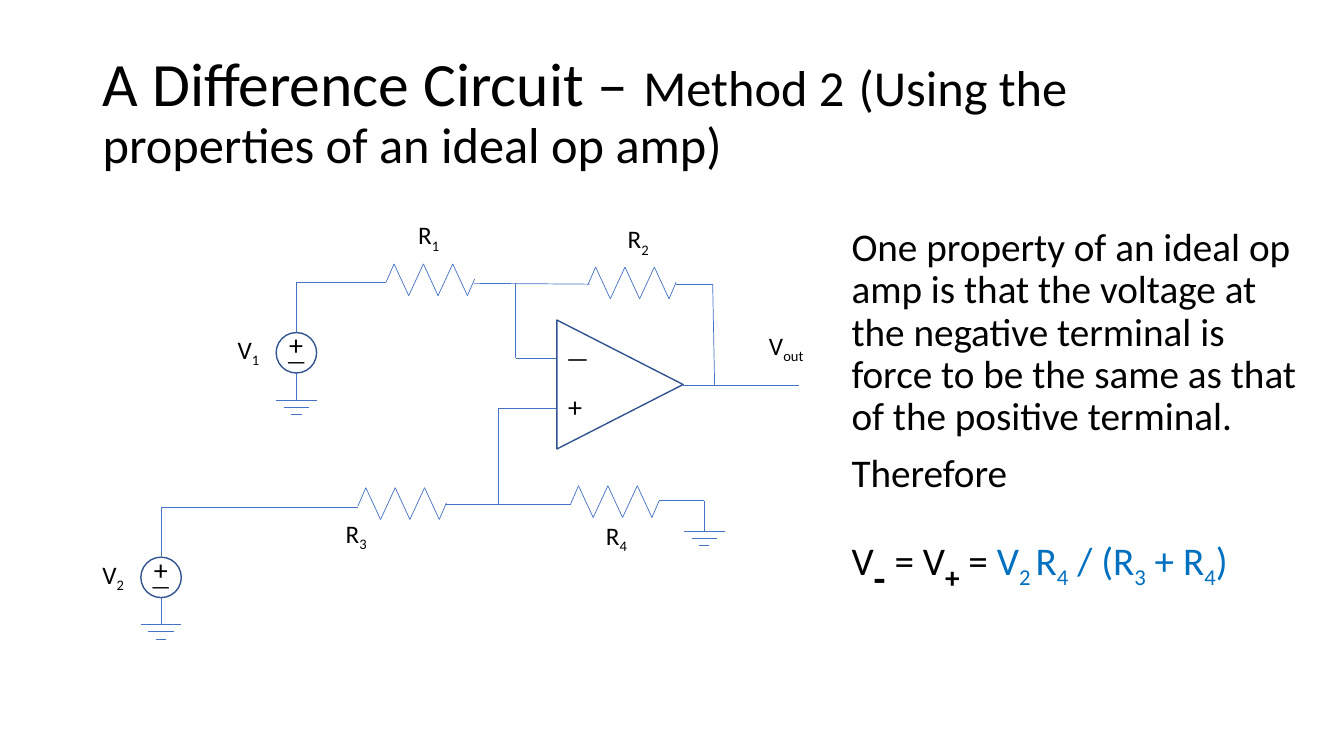
from dataclasses import dataclass
from itertools import pairwise

from lxml import etree
from pptx import Presentation
from pptx import util as u
from pptx.dml.color import RGBColor
from pptx.enum import shapes, text
from pptx.oxml import ns


@dataclass(frozen=True)
class Theme:
    font: str = "Calibri"
    ink: str = "000000"
    wire: str = "4472C4"
    outline: str = "325491"
    accent: str = "0070C0"
    title: int = 44
    subtitle: int = 36
    body: int = 28
    minus_sub: int = 48
    plus_sub: int = 36
    label: int = 18
    plus: int = 20
    small_minus: int = 16
    wire_width: float = 0.5
    outline_width: float = 1


T = Theme()
BLUE = {"color": T.accent}
BLUE_SUB = {"color": T.accent, "sub": True}


def style(font, size, color=T.ink):
    font.name, font.size = T.font, u.Pt(size)
    font.color.rgb = RGBColor.from_string(color)


def add_run(p, content, size=None, color=None, bold=None, sub=False):
    r = p.add_run()
    r.text = content
    if size:
        r.font.size = u.Pt(size)
    if color:
        r.font.color.rgb = RGBColor.from_string(color)
    r.font.bold = bold
    if sub:
        r._r.get_or_add_rPr().set("baseline", "-25000")


def add_box(parent, x, y, w, h, anchor=text.MSO_ANCHOR.TOP):
    sp = parent.add_textbox(u.Cm(x), u.Cm(y), u.Cm(w), u.Cm(h))
    tf = sp.text_frame
    tf.word_wrap, tf.vertical_anchor = True, anchor
    return tf


def title(s, x, y, w, h):
    p = add_box(s.shapes, x, y, w, h, text.MSO_ANCHOR.MIDDLE).paragraphs[0]
    style(p.font, T.title)
    p.line_spacing = 0.9
    add_run(p, "A Difference Circuit – ", T.title)
    add_run(p, "Method 2", T.subtitle)
    add_run(p, " ", T.title)
    add_run(p, "(Using the properties of an ideal op amp)", T.subtitle)


def explanation(s, x, y, w, h):
    tf = add_box(s.shapes, x, y, w, h)
    paragraphs = [
        [("One property of an ideal op amp is that the voltage at the negative "
          "terminal is force to be the same as that of the positive terminal.", {})],
        [("Therefore", {})],
        [("V", {}), ("-", {"size": T.minus_sub, "bold": True, "sub": True}),
         (" = V", {}), ("+", {"size": T.plus_sub, "bold": True, "sub": True}),
         (" = ", {}), ("V", BLUE), ("2 ", BLUE_SUB), ("R", BLUE), ("4", BLUE_SUB),
         (" / (R", BLUE), ("3", BLUE_SUB), (" + R", BLUE), ("4", BLUE_SUB), (")", BLUE)],
    ]
    for i, runs in enumerate(paragraphs):
        p = tf.add_paragraph() if i else tf.paragraphs[0]
        style(p.font, T.body)
        p.line_spacing, p.space_before = 0.9, u.Pt(10)
        for content, look in runs:
            add_run(p, content, **look)


class Circuit:
    """Draws circuit symbols in one group, in centimetres from its corner."""

    def __init__(self, s, x, y):
        self.group = s.shapes.add_group_shape()
        self.x, self.y = x, y

    def wire(self, *points):
        for (x1, y1), (x2, y2) in pairwise(points):
            ends = (self.x + x1, self.y + y1, self.x + x2, self.y + y2)
            line = self.group.shapes.add_connector(
                shapes.MSO_CONNECTOR.STRAIGHT, *map(u.Cm, ends))
            line.line.color.rgb = RGBColor.from_string(T.wire)
            line.line.width = u.Pt(T.wire_width)
            etree.SubElement(line._element.spPr, ns.qn("a:effectLst"))

    def outline(self, kind, x, y, w, h):
        sp = self.group.shapes.add_shape(
            kind, u.Cm(self.x + x), u.Cm(self.y + y), u.Cm(w), u.Cm(h))
        sp.shadow.inherit = False
        sp.fill.background()
        sp.line.color.rgb = RGBColor.from_string(T.outline)
        sp.line.width = u.Pt(T.outline_width)
        return sp

    def label(self, x, y, content, sub="", size=T.label, w=1.45):
        p = add_box(self.group.shapes, self.x + x, self.y + y, w, 1.02).paragraphs[0]
        style(p.font, size)
        add_run(p, content)
        if sub:
            add_run(p, sub, sub=True)

    def sign(self, x, y, content, size):
        self.label(x, y, content, size=size, w=0.86)

    def resistor(self, x, y, number, dx, dy):
        """Zigzag starting at x, y, with its label offset by dx, dy."""
        teeth = [(x + 0.2 + 0.37 * i, y + (0.34 if i % 2 else -0.46)) for i in range(6)]
        self.wire((x, y), *teeth, (x + 2.23, y - 0.08))
        self.label(x + dx, y + dy, "R", number)

    def ground(self, x, y):
        for i, half in enumerate((0.51, 0.32, 0.13)):
            self.wire((x - half, y + 0.18 * i), (x + half, y + 0.18 * i))

    def source(self, x, y, number):
        """Grounded voltage source centred on x, y."""
        radius, drop = 0.51, 1.19
        self.outline(shapes.MSO_SHAPE.OVAL, x - radius, y - radius, 2 * radius, 2 * radius)
        self.sign(x - 0.43, y - 0.75, "+", T.plus)
        self.sign(x - 0.51, y - 0.27, "—", T.small_minus)
        self.label(x - 1.73, y - 0.59, "V", number)
        self.wire((x, y + radius), (x, y + drop))
        self.ground(x, y + drop)

    def op_amp(self, x, y):
        sp = self.outline(shapes.MSO_SHAPE.ISOSCELES_TRIANGLE, x, y, 3.25, 3.18)
        sp.rotation = 90
        self.sign(x + 0.02, y + 0.41, "—", T.label)
        self.sign(x + 0.07, y + 1.6, "+", T.plus)


def difference_circuit(s, x, y):
    c = Circuit(s, x, y)
    c.op_amp(11.66, 2.7)
    c.source(5.13, 3.49, "1")
    c.source(1.72, 9.15, "2")
    c.resistor(7.39, 1.71, "1", 0.56, -1.7)
    c.resistor(12.47, 1.79, "2", 0.76, -1.68)
    c.resistor(6.68, 7.35, "3", -0.56, 0.18)
    c.resistor(12.04, 7.3, "4", 0.64, 0.28)
    c.label(16.79, 2.8, "V", "out")

    c.wire((5.13, 2.97), (5.13, 1.71), (7.39, 1.71))
    c.wire((1.72, 8.6), (1.72, 7.38), (6.68, 7.38))
    c.wire((9.6, 1.74), (12.52, 1.76))
    c.wire((8.89, 7.3), (12.04, 7.3))
    c.wire((11.68, 3.62), (10.66, 3.62), (10.66, 1.74))
    c.wire((11.68, 4.89), (10.21, 4.89), (10.21, 7.3))
    c.wire((14.86, 4.3), (17.8, 4.3))
    c.wire((15.67, 4.3), (15.62, 1.76), (14.7, 1.76))
    c.wire((14.27, 7.22), (15.41, 7.22), (15.41, 7.99))
    c.ground(15.41, 7.99)


def main():
    prs = Presentation()
    prs.slide_width, prs.slide_height = u.Cm(33.87), u.Cm(19.05)
    s = prs.slides.add_slide(prs.slide_layouts[6])
    title(s, 2.34, 1.02, 29.21, 3.68)
    difference_circuit(s, 2.34, 5.4)
    explanation(s, 21.21, 5.61, 11.99, 10.49)
    prs.save("out.pptx")


if __name__ == "__main__":
    main()
